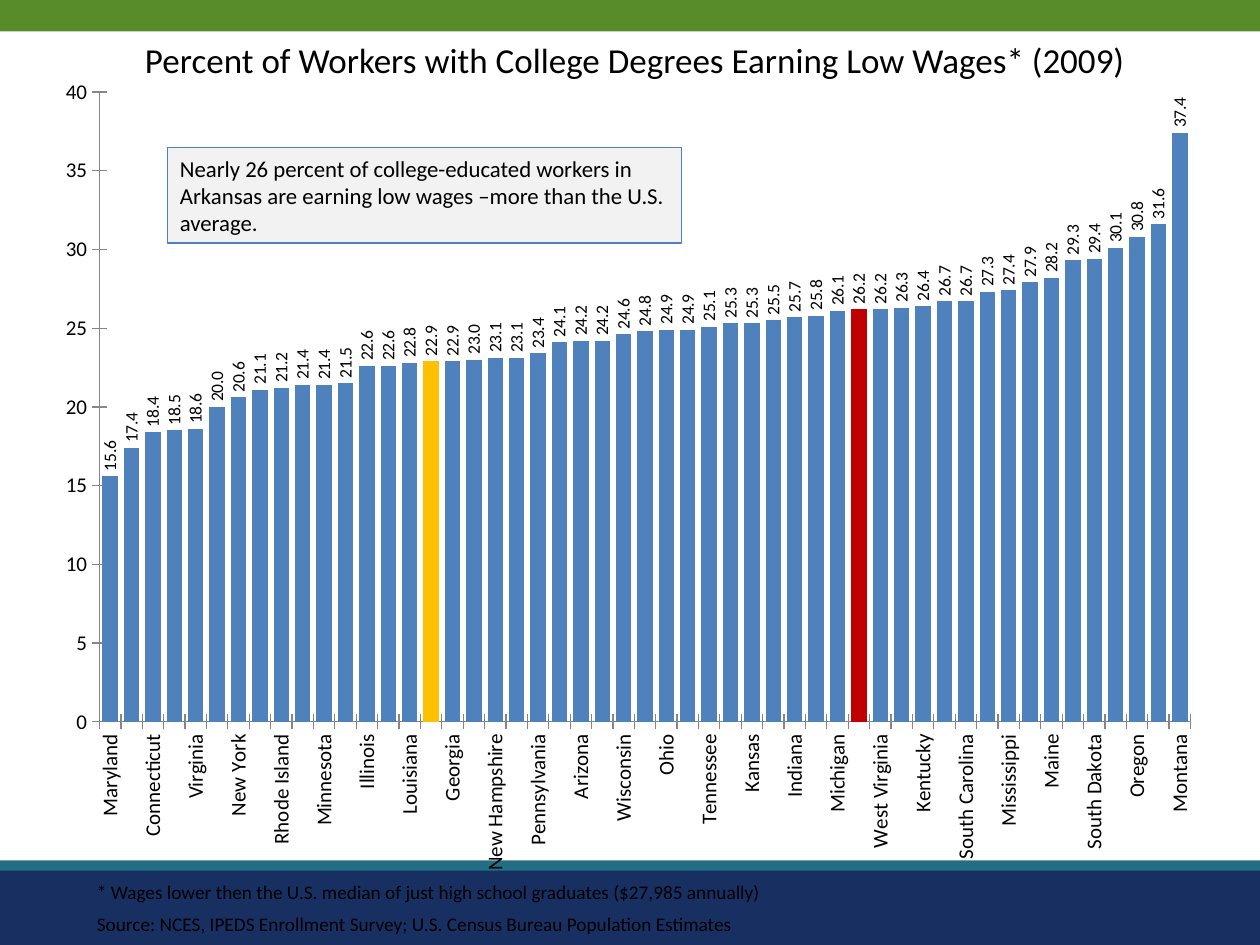
from lxml import etree
from pptx import Presentation
from pptx.chart.data import CategoryChartData
from pptx.dml.color import RGBColor
from pptx.enum import chart as c, shapes, text
from pptx.oxml.ns import qn
from pptx.util import Inches, Pt

COLORS = {
    "navy": "182F62", "green": "588C28", "teal": "206F82", "black": "000000",
    "bar": "4F81BD", "average": "FFC000", "arkansas": "C00000",
    "note": "F2F2F2", "axis": "868686",
}
FONT = "Calibri"
BANDS = [
    ("navy", 6.83, 0.67),
    ("green", 0, 0.25),
    ("teal", 6.83, 0.08),
]
TITLE = "Percent of Workers with College Degrees Earning Low Wages* (2009)"
NOTE = ("Nearly 26 percent of college-educated workers in Arkansas are earning "
        "low wages –more than the U.S. average.")
FOOTNOTES = [
    ("Source: NCES, IPEDS Enrollment Survey; U.S. Census Bureau Population Estimates", 7.19),
    ("* Wages lower then the U.S. median of just high school graduates ($27,985 annually)", 6.94),
]
RATES = [
    ("Maryland", 15.6), ("New Jersey", 17.4), ("Connecticut", 18.4),
    ("Massachusetts", 18.5), ("Virginia", 18.6), ("Delaware", 20),
    ("New York", 20.6), ("Texas", 21.1), ("Rhode Island", 21.2),
    ("California", 21.4), ("Minnesota", 21.4), ("Hawaii", 21.5),
    ("Illinois", 22.6), ("Alaska", 22.6), ("Louisiana", 22.8),
    ("United States", 22.9), ("Georgia", 22.9), ("Washington", 23),
    ("New Hampshire", 23.1), ("Nevada", 23.1), ("Pennsylvania", 23.4),
    ("Colorado", 24.1), ("Arizona", 24.2), ("Alabama", 24.2),
    ("Wisconsin", 24.6), ("North Carolina", 24.8), ("Ohio", 24.9),
    ("Missouri", 24.9), ("Tennessee", 25.1), ("Vermont", 25.3),
    ("Kansas", 25.3), ("Oklahoma", 25.5), ("Indiana", 25.7),
    ("Nebraska", 25.8), ("Michigan", 26.1), ("Arkansas", 26.2),
    ("West Virginia", 26.2), ("Iowa", 26.3), ("Kentucky", 26.4),
    ("Florida", 26.7), ("South Carolina", 26.7), ("Wyoming", 27.3),
    ("Mississippi", 27.4), ("Utah", 27.9), ("Maine", 28.2),
    ("New Mexico", 29.3), ("South Dakota", 29.4), ("Idaho", 30.1),
    ("Oregon", 30.8), ("North Dakota", 31.6), ("Montana", 37.4),
]
HIGHLIGHTS = {"United States": "average", "Arkansas": "arkansas"}
CHART_BOX = (0.33, 0.5, 9.31, 6.55)
PLOT_BOX = (0.79, 0.73, 8.66, 5.0)


def rgb(name):
    return RGBColor.from_string(COLORS[name])


def style_font(font, size):
    font.name = FONT
    font.size = Pt(size)
    font.color.rgb = rgb("black")


def fill_solid(target, name):
    target.fill.solid()
    target.fill.fore_color.rgb = rgb(name)


def write(shape, content, size, align=text.PP_ALIGN.LEFT):
    frame = shape.text_frame
    frame.word_wrap = True
    frame.text = content
    paragraph = frame.paragraphs[0]
    paragraph.alignment = align
    style_font(paragraph.runs[0].font, size)


def add_rectangle(slide, box, color):
    shape = slide.shapes.add_shape(shapes.MSO_SHAPE.RECTANGLE, *map(Inches, box))
    shape.shadow.inherit = False
    fill_solid(shape, color)
    shape.line.fill.background()
    return shape


def add_text(slide, box, *content):
    write(slide.shapes.add_textbox(*map(Inches, box)), *content)


def turn_upright(element):
    body = element.find(qn("c:txPr")).find(qn("a:bodyPr"))
    body.set("rot", "-5400000")
    body.set("vert", "horz")


def place_plot(chart):
    area = chart._chartSpace.chart.plotArea
    layout = area.find(qn("c:layout"))
    if layout is None:
        layout = etree.Element(qn("c:layout"))
        area.insert(0, layout)
    manual = etree.SubElement(layout, qn("c:manualLayout"))
    left, top, width, height = CHART_BOX
    x, y, w, h = PLOT_BOX
    settings = [
        ("layoutTarget", "inner"), ("xMode", "edge"), ("yMode", "edge"),
        ("x", (x - left) / width), ("y", (y - top) / height),
        ("w", w / width), ("h", h / height),
    ]
    for tag, value in settings:
        etree.SubElement(manual, qn(f"c:{tag}")).set("val", str(value))


def add_wage_chart(slide):
    data = CategoryChartData(number_format="0.0")
    data.categories = [state for state, rate in RATES]
    data.add_series("Series 1", [rate for state, rate in RATES])
    chart = slide.shapes.add_chart(
        c.XL_CHART_TYPE.COLUMN_CLUSTERED, *map(Inches, CHART_BOX), data).chart
    chart.has_legend = False
    chart.has_title = False
    style_font(chart.font, 10)

    plot = chart.plots[0]
    plot.gap_width = 39
    plot.vary_by_categories = False
    series = plot.series[0]
    fill_solid(series.format, "bar")
    for index, (state, rate) in enumerate(RATES):
        if state in HIGHLIGHTS:
            fill_solid(series.points[index].format, HIGHLIGHTS[state])

    plot.has_data_labels = True
    labels = plot.data_labels
    labels.show_value = True
    labels.number_format = "0.0"
    labels.number_format_is_linked = False
    labels.position = c.XL_LABEL_POSITION.OUTSIDE_END
    style_font(labels.font, 10)
    turn_upright(labels._element)

    for axis in (chart.category_axis, chart.value_axis):
        axis.has_major_gridlines = False
        axis.major_tick_mark = c.XL_TICK_MARK.CROSS
        axis.format.line.color.rgb = rgb("axis")
        style_font(axis.tick_labels.font, 12)
    values = chart.value_axis
    values.minimum_scale, values.maximum_scale, values.major_unit = 0, 40, 5
    values.tick_labels.number_format = "0"
    values.tick_labels.number_format_is_linked = False
    categories = chart.category_axis._element
    turn_upright(categories)
    skip = etree.Element(qn("c:tickLblSkip"))
    skip.set("val", "2")
    categories.find(qn("c:noMultiLvlLbl")).addprevious(skip)
    place_plot(chart)


def main():
    presentation = Presentation()
    presentation.slide_width, presentation.slide_height = Inches(10), Inches(7.5)
    slide = presentation.slides.add_slide(presentation.slide_layouts[6])
    for color, top, height in BANDS:
        add_rectangle(slide, (0, top, 10, height), color)
    add_text(slide, (0.75, 0.26, 8.58, 0.44), TITLE, 20, text.PP_ALIGN.CENTER)
    for content, top in FOOTNOTES:
        add_text(slide, (0.67, top, 8.25, 0.29), content, 11)
    add_wage_chart(slide)
    note = add_rectangle(slide, (1.33, 1.17, 4.08, 0.76), "note")
    note.line.color.rgb = rgb("bar")
    note.line.width = Pt(0.75)
    write(note, NOTE, 13)
    presentation.save("out.pptx")


if __name__ == "__main__":
    main()
